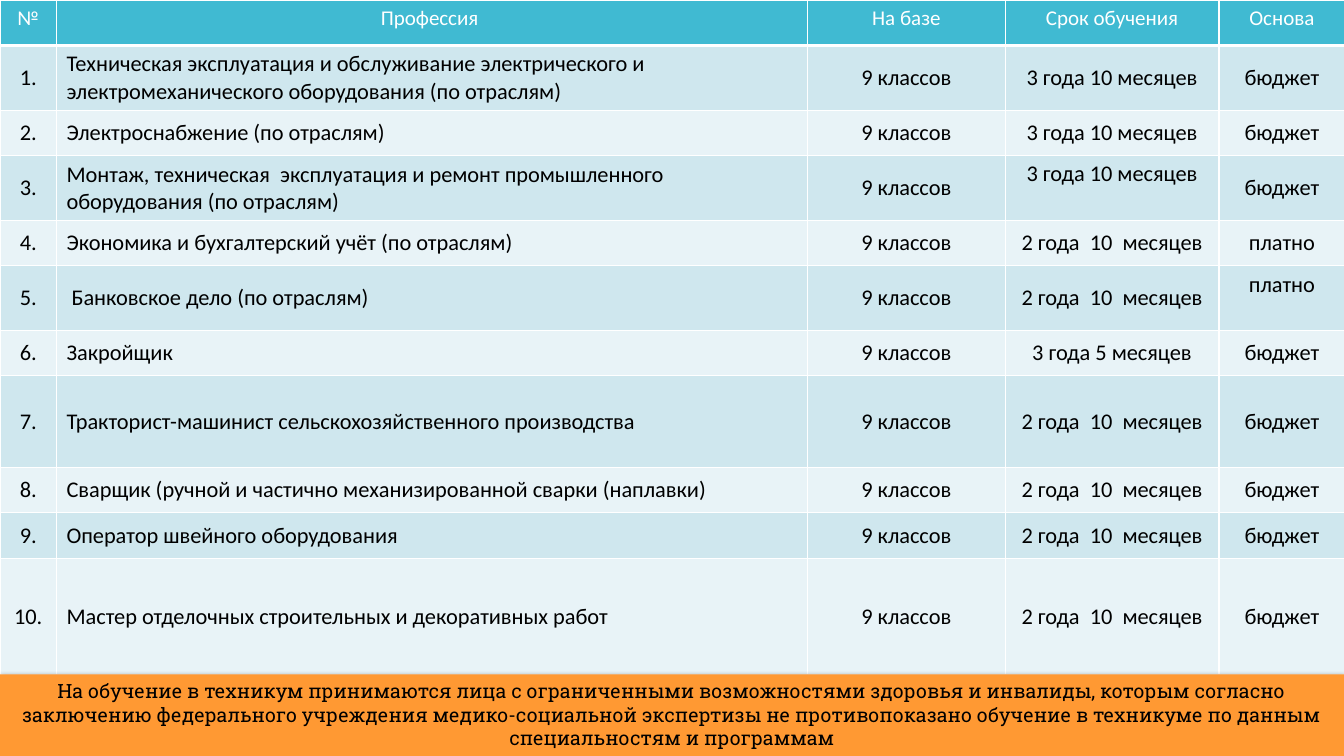
from pptx import Presentation
from pptx.dml.color import RGBColor
from pptx.enum.shapes import MSO_SHAPE
from pptx.enum.text import MSO_ANCHOR, MSO_AUTO_SIZE, PP_ALIGN
from pptx.oxml import parse_xml
from pptx.oxml.ns import nsdecls
from pptx.util import Inches, Pt

HUES = {"head": "40BAD2", "odd": "CFE7EE", "even": "E8F3F7",
        "note": "FF9933", "light": "FFFFFF", "dark": "000000"}
WIDE, HIGH = 13.33, 7.5
TOP = 6.69  # where the note starts
COLS = [0.56, 7.45, 1.96, 2.12, 1.25]
ROWS = [0.45, 0.64, 0.45, 0.64, 0.45, 0.64, 0.45, 0.91, 0.45, 0.45, 1.16]
HEAD = ["№", "Профессия ", "На базе", "Срок обучения", "Основа"]
BASE = "9 классов"
LONG, MID, SHORT = "3 года 10 месяцев", "3 года 5 месяцев", "2 года  10  месяцев"
FREE, PAID = "бюджет", "платно"
JOBS = [
    ("Техническая эксплуатация и обслуживание электрического и "
     "электромеханического оборудования (по отраслям)", LONG, FREE),
    ("Электроснабжение (по отраслям)", LONG, FREE),
    ("Монтаж, техническая  эксплуатация и ремонт промышленного "
     "оборудования (по отраслям)", LONG, FREE),
    ("Экономика и бухгалтерский учёт (по отраслям)", SHORT, PAID),
    (" Банковское дело (по отраслям)", SHORT, PAID),
    ("Закройщик", MID, FREE),
    ("Тракторист-машинист сельскохозяйственного производства", SHORT, FREE),
    ("Сварщик (ручной и частично механизированной сварки (наплавки)", SHORT, FREE),
    ("Оператор швейного оборудования", SHORT, FREE),
    ("Мастер отделочных строительных и декоративных работ", SHORT, FREE),
]
RAISED = {(3, 3), (5, 4)}  # body cells set at the top
NOTE = ("На обучение в техникум принимаются лица с ограниченными возможностями "
        "здоровья и инвалиды, которым согласно заключению федерального учреждения "
        "медико-социальной экспертизы не противопоказано обучение в техникуме по "
        "данным специальностям и программам")


def paint(fill, hue):
    fill.solid()
    fill.fore_color.rgb = RGBColor.from_string(HUES[hue])


def style(para, face, size, hue, align):
    para.alignment = align
    font = para.font
    font.name, font.size, font.bold = face, Pt(size), False
    font.color.rgb = RGBColor.from_string(HUES[hue])


def edge(cell, low):
    """Draw white cell borders; low is the width of the bottom one."""
    props = cell._tc.get_or_add_tcPr()
    sides = {"lnL": 1, "lnR": 1, "lnT": 1, "lnB": low}
    for place, (side, width) in enumerate(sides.items()):
        props.insert(place, parse_xml(
            f'<a:{side} {nsdecls("a")} w="{Pt(width)}"><a:solidFill>'
            f'<a:srgbClr val="{HUES["light"]}"/></a:solidFill></a:{side}>'))


def add_grid(slide):
    table = slide.shapes.add_table(len(ROWS), len(COLS), 0, 0,
                                   Inches(WIDE), Inches(TOP)).table
    for col, width in zip(table.columns, COLS):
        col.width = Inches(width)
    for row, height in zip(table.rows, ROWS):
        row.height = Inches(height)
    body = [(f"{num}.", job, BASE, term, pay)
            for num, (job, term, pay) in enumerate(JOBS, 1)]
    for r, line in enumerate([HEAD] + body):
        for c, text in enumerate(line):
            cell = table.cell(r, c)
            cell.text = text
            top = r == 0 or (r, c) in RAISED
            cell.vertical_anchor = MSO_ANCHOR.TOP if top else MSO_ANCHOR.MIDDLE
            paint(cell.fill, "head" if r == 0 else "odd" if r % 2 else "even")
            edge(cell, 1 if r else 3)
            align = PP_ALIGN.LEFT if r and c == 1 else PP_ALIGN.CENTER
            style(cell.text_frame.paragraphs[0], "Calibri", 16 if r else 15,
                  "dark" if r else "light", align)


def shade(shape):
    """Give the shape a soft shadow straight below it."""
    shape.shadow.inherit = False
    shape._element.spPr.find("{*}effectLst").append(parse_xml(
        f'<a:outerShdw {nsdecls("a")} blurRad="{Pt(3.5)}" dist="{Pt(1.1)}" '
        f'dir="5400000" rotWithShape="0"><a:srgbClr val="{HUES["dark"]}">'
        '<a:alpha val="45000"/></a:srgbClr></a:outerShdw>'))


def add_note(slide):
    bar = slide.shapes.add_shape(MSO_SHAPE.RECTANGLE, 0, Inches(TOP),
                                 Inches(WIDE), Inches(HIGH - TOP))
    paint(bar.fill, "note")
    bar.line.fill.background()
    shade(bar)
    frame = bar.text_frame
    frame.word_wrap = True
    frame.auto_size = MSO_AUTO_SIZE.SHAPE_TO_FIT_TEXT
    frame.vertical_anchor = MSO_ANCHOR.TOP
    frame.text = NOTE
    para = frame.paragraphs[0]
    style(para, "Roboto Slab", 14, "dark", PP_ALIGN.CENTER)


def main():
    deck = Presentation()
    deck.slide_width, deck.slide_height = Inches(WIDE), Inches(HIGH)
    slide = deck.slides.add_slide(deck.slide_layouts[6])
    add_grid(slide)
    add_note(slide)
    deck.save("out.pptx")


if __name__ == "__main__":
    main()
